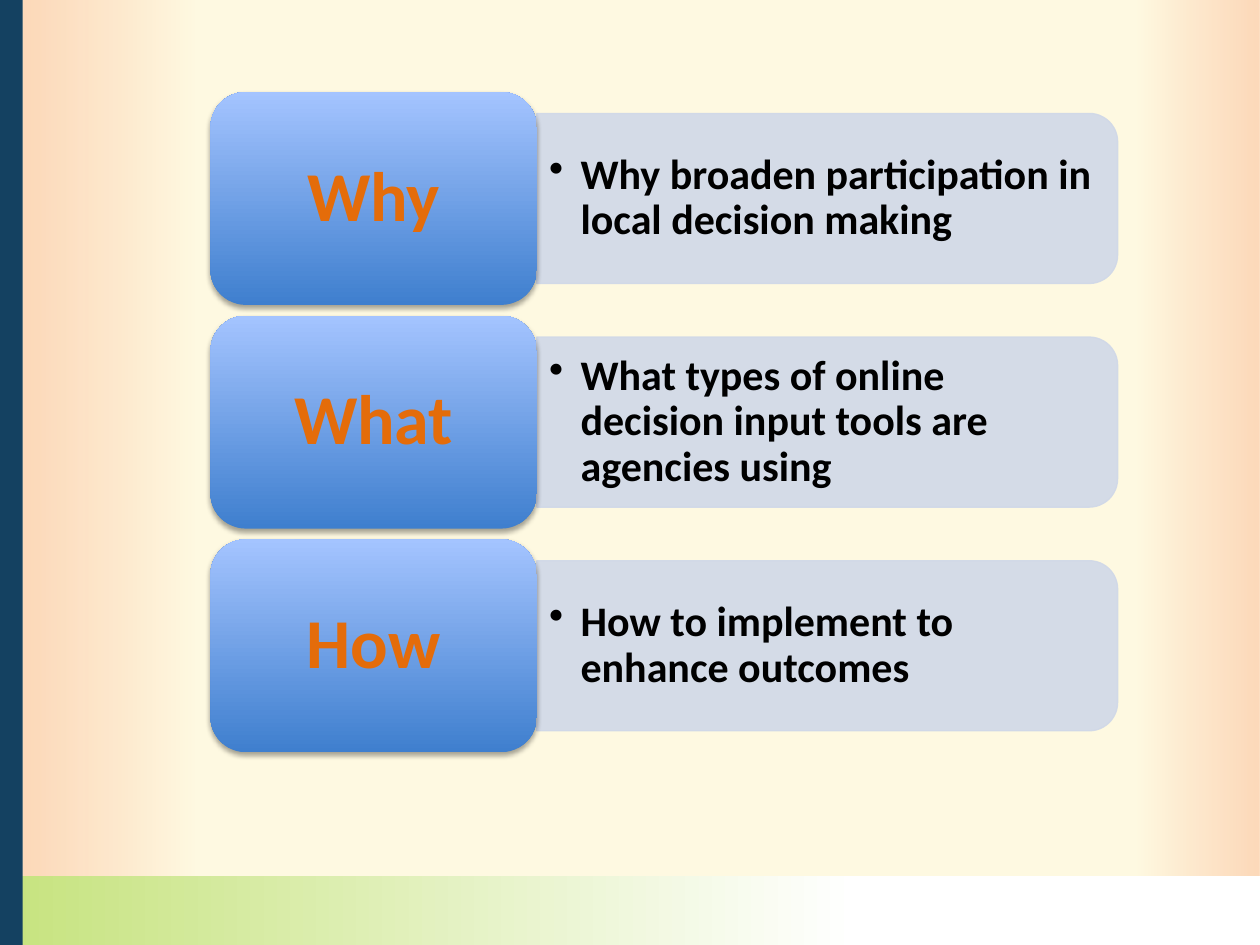
"""Builds the Why / What / How overview slide."""
import pptx
import pptx.dml.color
import pptx.enum.shapes
import pptx.enum.text
import pptx.oxml
import pptx.oxml.ns
import pptx.util

Inches = pptx.util.Inches
Points = pptx.util.Pt
Kind = pptx.enum.shapes.MSO_SHAPE
Align = pptx.enum.text.PP_ALIGN

WIDTH, HEIGHT = 10, 7.5
EDGE = 0.18
LABEL_LEFT, LABEL_WIDTH, LABEL_HEIGHT = 1.67, 2.59, 1.69
PANEL_LEFT, PANEL_WIDTH, PANEL_HEIGHT = LABEL_LEFT + LABEL_WIDTH, 4.61, 1.35
FIRST_ROW, ROW_STEP = 0.73, 1.775
ROWS = [
    ("Why", "Why broaden participation in local decision making"),
    ("What", "What types of online decision input tools are agencies using"),
    ("How", "How to implement to enhance outcomes"),
]


def color(code):
    """Turns a hex string into a colour."""
    return pptx.dml.color.RGBColor.from_string(code)


def element(markup):
    """Parses one drawing element, adding the namespace."""
    name, rest = markup[:-2].split(" ", 1) if " " in markup else (markup[:-2], "")
    return pptx.oxml.parse_xml(f"{name} {pptx.oxml.ns.nsdecls('a')} {rest}/>")


def add_alpha(parent, percent):
    """Sets the opacity of every RGB colour below an element."""
    for rgb in list(parent.iter(pptx.oxml.ns.qn("a:srgbClr"))):
        rgb.append(element(f'<a:alpha val="{percent * 1000}"/>'))


def add_block(page, kind, left, top, width, height):
    """Adds a preset shape without line or shadow."""
    block = page.shapes.add_shape(
        kind, Inches(left), Inches(top), Inches(width), Inches(height))
    block.shadow.inherit = False
    block.line.fill.background()
    return block


def fill_solid(block, code):
    """Fills a shape with one colour."""
    block.fill.solid()
    block.fill.fore_color.rgb = color(code)


def fill_gradient(block, stops, angle=0):
    """Fills a shape with (position, colour, opacity) stops."""
    block.fill.gradient()
    block.fill.gradient_angle = angle
    stop_list = next(block.element.iter(pptx.oxml.ns.qn("a:gsLst")))
    for old in list(stop_list):
        stop_list.remove(old)
    for position, code, opacity in stops:
        stop = element(f'<a:gs pos="{position * 1000}"/>')
        stop.append(element(f'<a:srgbClr val="{code}"/>'))
        if opacity < 100:
            add_alpha(stop, opacity)
        stop_list.append(stop)


def add_shadow(block):
    """Gives a shape a soft shadow below it."""
    shadow = element(
        f'<a:outerShdw blurRad="{Points(3.1)}" dist="{Points(1.8)}" '
        'dir="5400000" rotWithShape="0"/>')
    shadow.append(element('<a:srgbClr val="000000"/>'))
    add_alpha(shadow, 35)
    next(block.element.iter(pptx.oxml.ns.qn("a:effectLst"))).append(shadow)


def add_text(page, text, area, size, code, insets=(0.1, 0.05), align=Align.LEFT):
    """Adds a vertically centred bold text box and returns its paragraph."""
    box = page.shapes.add_textbox(*map(Inches, area))
    frame = box.text_frame
    frame.word_wrap = True
    frame.vertical_anchor = pptx.enum.text.MSO_ANCHOR.MIDDLE
    frame.margin_left = frame.margin_right = Inches(insets[0])
    frame.margin_top = frame.margin_bottom = Inches(insets[1])
    para = frame.paragraphs[0]
    para.text = text
    para.alignment = align
    para.line_spacing = 0.9
    para.font.name = "Calibri"
    para.font.size = Points(size)
    para.font.bold = True
    para.font.color.rgb = color(code)
    return para


def add_bullet(para):
    """Gives a paragraph a hanging bullet."""
    properties = para._p.get_or_add_pPr()
    properties.set("marL", str(Inches(0.25)))
    properties.set("indent", str(-Inches(0.25)))
    bullet = element('<a:buChar char="•"/>')
    properties.insert_element_before(bullet, "a:tabLst", "a:defRPr", "a:extLst")


def add_backdrop(page):
    """Draws the background, the bottom band and the left edge."""
    page.background.fill.solid()
    page.background.fill.fore_color.rgb = color("FEFEE9")
    field = add_block(page, Kind.RECTANGLE, EDGE, 0, WIDTH - EDGE, 7.08)
    fill_gradient(field, [(0, "FCD5B5", 91), (14, "FEF9E1", 100),
                          (90, "FEF9E1", 100), (100, "FCD5B5", 91)])
    band = add_block(page, Kind.RECTANGLE, 0, 6.95, WIDTH, HEIGHT - 6.95)
    fill_gradient(band, [(0, "C6E37E", 100), (68, "FFFFFF", 100)])
    edge = add_block(page, Kind.RECTANGLE, 0, 0, EDGE, HEIGHT)
    fill_solid(edge, "144161")


def add_panel(page, middle, text):
    """Draws the pale panel with its bullet, centred on a height."""
    left = PANEL_LEFT + (PANEL_WIDTH - PANEL_HEIGHT) / 2
    panel = add_block(page, Kind.ROUND_2_SAME_RECTANGLE, left,
                      middle - PANEL_WIDTH / 2, PANEL_HEIGHT, PANEL_WIDTH)
    panel.rotation = 90
    fill_solid(panel, "D0D8E8")
    panel.line.color.rgb = color("D0D8E8")
    panel.line.width = Points(0.75)
    add_alpha(panel.element.spPr, 90)
    area = (PANEL_LEFT, middle - 0.61, 4.54, 1.22)
    add_bullet(add_text(page, text, area, 24, "000000"))


def add_label(page, top, text):
    """Draws the blue tile with its word."""
    tile = add_block(page, Kind.ROUNDED_RECTANGLE, LABEL_LEFT, top,
                     LABEL_WIDTH, LABEL_HEIGHT)
    fill_gradient(tile, [(0, "3F7FCE", 100), (100, "A4C4FF", 100)], angle=90)
    add_shadow(tile)
    gap = 0.08
    area = (LABEL_LEFT + gap, top + gap, LABEL_WIDTH - 2 * gap, LABEL_HEIGHT - 2 * gap)
    add_text(page, text, area, 40, "E46C0A", (0.17, 0.08), Align.CENTER)


def main():
    """Builds and saves the deck."""
    deck = pptx.Presentation()
    deck.slide_width, deck.slide_height = Inches(WIDTH), Inches(HEIGHT)
    page = deck.slides.add_slide(deck.slide_layouts[6])
    add_backdrop(page)
    for row, (label, text) in enumerate(ROWS):
        top = FIRST_ROW + row * ROW_STEP
        add_panel(page, top + LABEL_HEIGHT / 2, text)
        add_label(page, top, label)
    deck.save("out.pptx")


if __name__ == "__main__":
    main()
